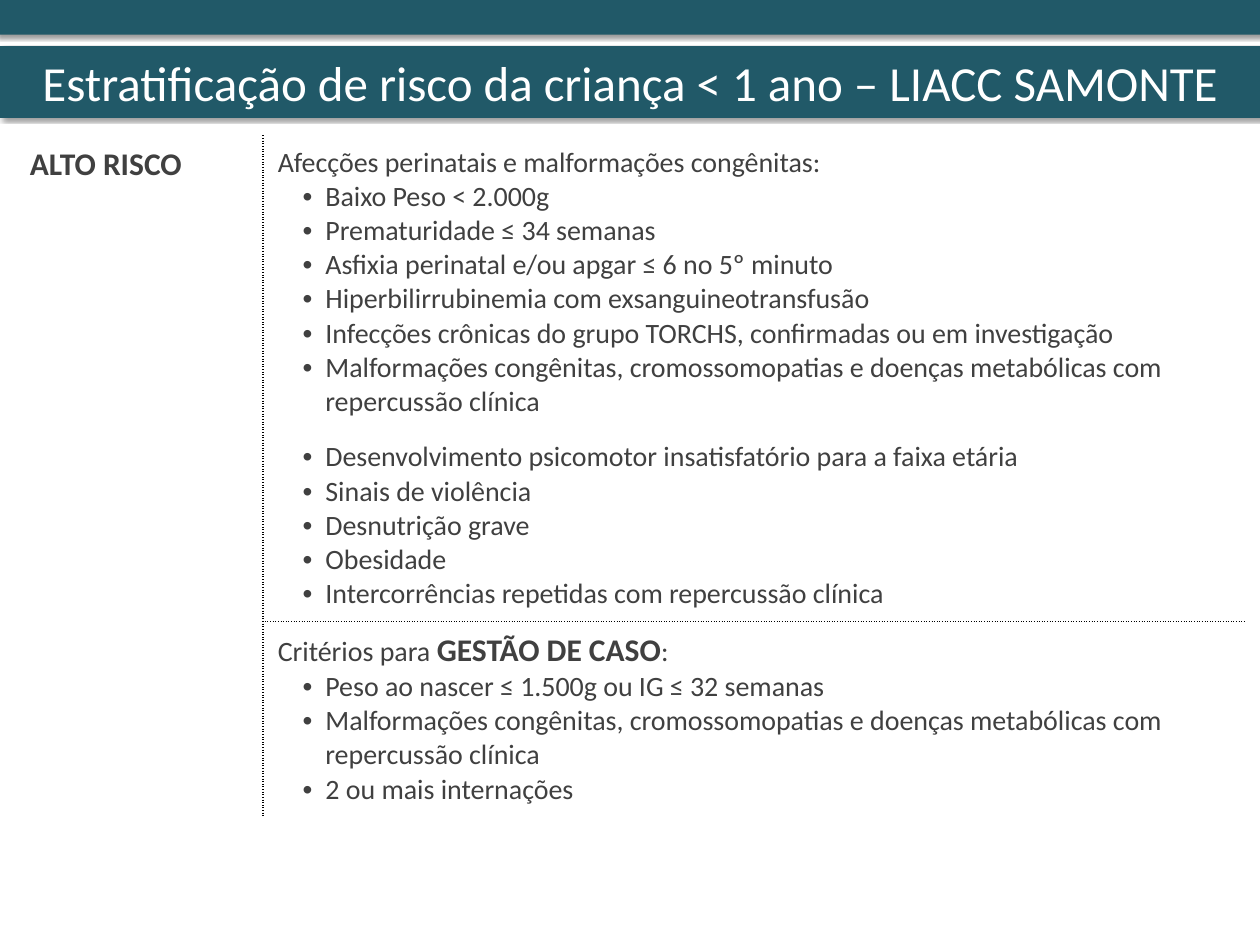
from lxml.etree import SubElement
from pptx import Presentation
from pptx.dml.color import RGBColor
from pptx.enum.shapes import MSO_SHAPE
from pptx.enum.text import MSO_ANCHOR, PP_ALIGN
from pptx.oxml import parse_xml
from pptx.oxml.ns import nsdecls, qn
from pptx.util import Cm, Pt

TEAL, GREY, WHITE, BLACK = "215968", "404040", "FFFFFF", "000000"
BODY = {"size": Pt(16), "bold": False, "name": "Calibri"}
STRONG = {"size": Pt(18), "bold": True, "name": "Calibri"}
TITLE = {"size": Pt(28), "name": "Calibri"}

MALFORMATIONS = ("Malformações congênitas, cromossomopatias e doenças "
                 "metabólicas com repercussão clínica")
HIGH_RISK = [
    "Baixo Peso < 2.000g",
    "Prematuridade ≤ 34 semanas",
    "Asfixia perinatal e/ou apgar ≤ 6 no 5º minuto",
    "Hiperbilirrubinemia com exsanguineotransfusão",
    "Infecções crônicas do grupo TORCHS, confirmadas ou em investigação",
    MALFORMATIONS,
    "Desenvolvimento psicomotor insatisfatório para a faixa etária",
    "Sinais de violência",
    "Desnutrição grave",
    "Obesidade",
    "Intercorrências repetidas com repercussão clínica",
]
GROUP_START = HIGH_RISK[6]
CASE_MANAGEMENT = [
    "Peso ao nascer ≤ 1.500g ou IG ≤ 32 semanas",
    MALFORMATIONS,
    "2 ou mais internações",
]


def color(hex_value):
    return RGBColor.from_string(hex_value)


def add_run(paragraph, text, font_format, hex_value=GREY):
    run = paragraph.add_run()
    run.text = text
    for name, value in font_format.items():
        setattr(run.font, name, value)
    run.font.color.rgb = color(hex_value)


presentation = Presentation()
presentation.slide_width, presentation.slide_height = Cm(25.4), Cm(19.05)
slide = presentation.slides.add_slide(presentation.slide_layouts[6])

# Top band and title band: left, top, width, height, shadow angle, text
bands = [
    (-0.05, 0, 25.5, 0.7, 90, ""),
    (0, 0.93, 25.4, 1.45, 45,
     "Estratificação de risco da criança < 1 ano – LIACC SAMONTE"),
]
for left, top, width, height, angle, text in bands:
    shape = slide.shapes.add_shape(
        MSO_SHAPE.RECTANGLE, Cm(left), Cm(top), Cm(width), Cm(height))
    shape.fill.solid()
    shape.fill.fore_color.rgb = color(TEAL)
    shape.line.fill.background()
    shape.shadow.inherit = False
    effects = shape._element.spPr.find(qn("a:effectLst"))
    effects.append(parse_xml(
        f'<a:outerShdw {nsdecls("a")} blurRad="{Pt(2)}" dist="{Pt(2)}" '
        f'dir="{angle * 60000}" rotWithShape="0"><a:srgbClr val="{BLACK}">'
        '<a:alpha val="40000"/></a:srgbClr></a:outerShdw>'))
    if text:
        shape.text_frame.word_wrap = True
        shape.text_frame.vertical_anchor = MSO_ANCHOR.MIDDLE
        paragraph = shape.text_frame.paragraphs[0]
        paragraph.alignment = PP_ALIGN.CENTER
        add_run(paragraph, text, TITLE, WHITE)

# Risk table
table = slide.shapes.add_table(
    2, 2, Cm(0.3), Cm(2.73), Cm(24.8), Cm(12.6)).table
table.first_row = table.horz_banding = False
for column, width in zip(table.columns, (5, 19.8)):
    column.width = Cm(width)
for row, height in zip(table.rows, (8.9, 3.7)):
    row.height = Cm(height)

dotted_sides = {(0, 0): ["R"], (1, 0): ["R"],
                (0, 1): ["L", "B"], (1, 1): ["L", "T"]}
for (row, column), dotted in dotted_sides.items():
    cell = table.cell(row, column)
    properties = cell._tc.get_or_add_tcPr()
    for side in "LRTB":
        line = SubElement(properties, qn(f"a:ln{side}"), w=str(Pt(1)))
        if side in dotted:
            fill = SubElement(line, qn("a:solidFill"))
            SubElement(fill, qn("a:srgbClr"), val=BLACK)
            SubElement(line, qn("a:prstDash"), val="sysDot")
        else:
            SubElement(line, qn("a:noFill"))
    cell.fill.background()
    cell.margin_left = cell.margin_right = Cm(0.3)
    cell.margin_top = cell.margin_bottom = Cm(0.2)

add_run(table.cell(0, 0).text_frame.paragraphs[0], "ALTO RISCO", STRONG)

sections = [
    ([("Afecções perinatais e malformações congênitas:", BODY)], HIGH_RISK),
    ([("Critérios para ", BODY), ("GESTÃO DE CASO", STRONG), (":", BODY)],
     CASE_MANAGEMENT),
]
for row, (heading, items) in enumerate(sections):
    text_frame = table.cell(row, 1).text_frame
    paragraph = text_frame.paragraphs[0]
    paragraph.space_before = Pt(6)
    for text, font_format in heading:
        add_run(paragraph, text, font_format)
    for item in items:
        paragraph = text_frame.add_paragraph()
        paragraph.space_before = Pt(12 if item == GROUP_START else 0)
        properties = paragraph._p.get_or_add_pPr()
        properties.set("marL", str(Cm(0.96)))
        properties.set("indent", str(Cm(-0.46)))
        SubElement(properties, qn("a:buFont"), typeface="Arial")
        SubElement(properties, qn("a:buChar"), char="•")
        add_run(paragraph, item, BODY)

presentation.save("out.pptx")
